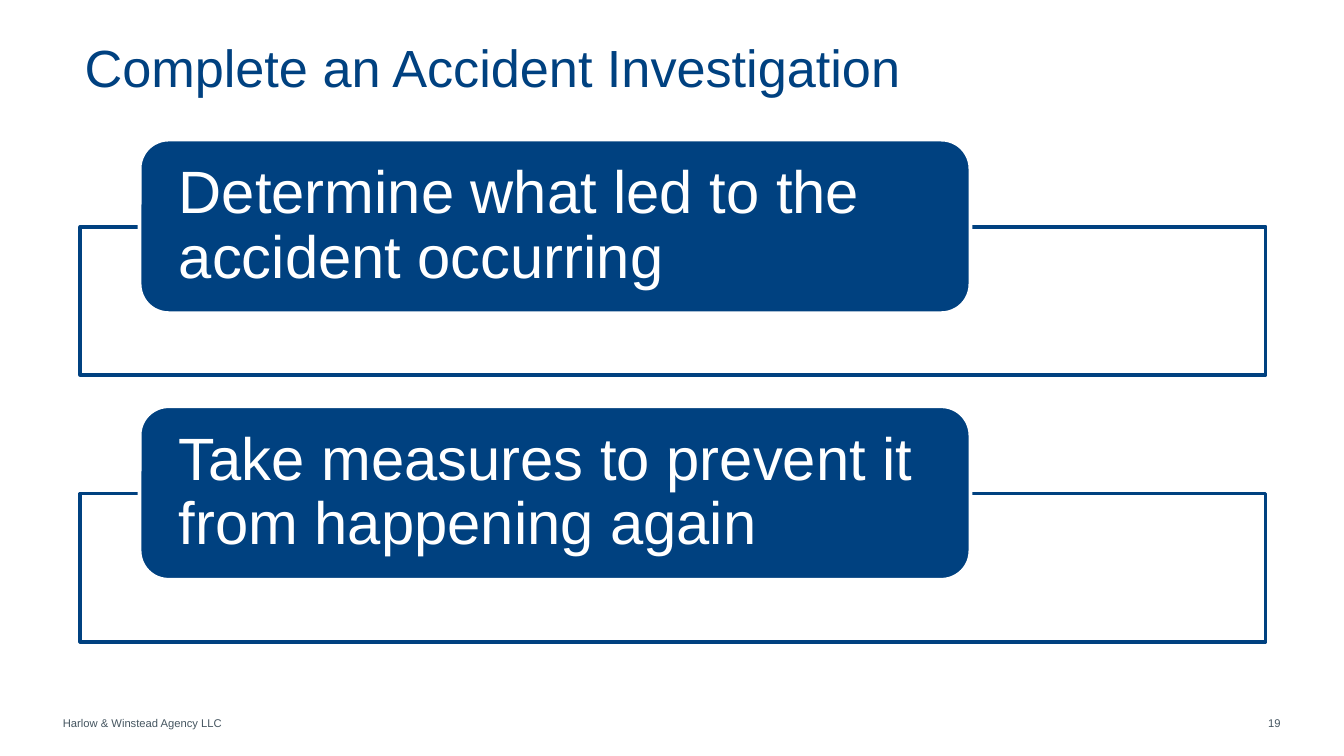
from dataclasses import dataclass
from pptx import Presentation
from pptx.dml.color import RGBColor as RGB
from pptx.enum.shapes import MSO_SHAPE as Shape
from pptx.enum.text import MSO_ANCHOR as Anchor, PP_ALIGN as Align
from pptx.util import Cm, Pt


@dataclass(frozen=True)
class Theme:
    font: str = "Arial"
    navy: RGB = RGB(0x00, 0x41, 0x80)
    white: RGB = RGB(0xFF, 0xFF, 0xFF)
    gray: RGB = RGB(0x45, 0x55, 0x60)
    title: Pt = Pt(28)
    body: Pt = Pt(32)
    small: Pt = Pt(6)
    line: Pt = Pt(2)


theme = Theme()


def write(shape, text, size=theme.small, color=theme.gray, align=Align.LEFT,
          anchor=Anchor.TOP, pad=0, space=1.0, wrap=True):
    frame = shape.text_frame
    frame.word_wrap = wrap
    frame.vertical_anchor = anchor
    frame.margin_left = frame.margin_right = Cm(pad)
    frame.margin_top = frame.margin_bottom = 0
    para = frame.paragraphs[0]
    para.alignment = align
    para.line_spacing = space
    run = para.add_run()
    run.text = text
    run.font.name = theme.font
    run.font.size = size
    run.font.color.rgb = color


def block(kind, left, top, width, height, fill, line):
    shape = slide.shapes.add_shape(kind, Cm(left), Cm(top), Cm(width), Cm(height))
    shape.shadow.inherit = False
    shape.fill.solid()
    shape.fill.fore_color.rgb = fill
    shape.line.color.rgb = line
    shape.line.width = theme.line
    return shape


deck = Presentation()
deck.slide_width, deck.slide_height = Cm(25.4), Cm(14.29)
slide = deck.slides.add_slide(deck.slide_layouts[6])

foot = slide.shapes.add_textbox(Cm(1.19), Cm(13.59), Cm(7.65), Cm(0.2))
write(foot, "Harlow & Winstead Agency LLC", anchor=Anchor.BOTTOM, wrap=False)

title = slide.shapes.add_textbox(Cm(1.6), Cm(0.86), Cm(22.33), Cm(1.68))
write(title, "Complete an Accident Investigation", size=theme.title,
      color=theme.navy, space=0.83)

page = slide.shapes.add_textbox(Cm(23.67), Cm(13.54), Cm(0.53), Cm(0.25))
write(page, "19", align=Align.RIGHT)

steps = ["Determine what led to the accident occurring",
         "Take measures to prevent it from happening again"]
for row, step in enumerate(steps):
    top = 2.64 + row * 5.04
    block(Shape.RECTANGLE, 1.52, top + 1.65, 22.4, 2.8, theme.white, theme.navy)
    label = block(Shape.ROUNDED_RECTANGLE, 2.64, top, 15.7, 3.28,
                  theme.navy, theme.white)
    write(label, step, size=theme.body, color=theme.white,
          anchor=Anchor.MIDDLE, pad=0.58, space=0.9)

deck.save("out.pptx")
